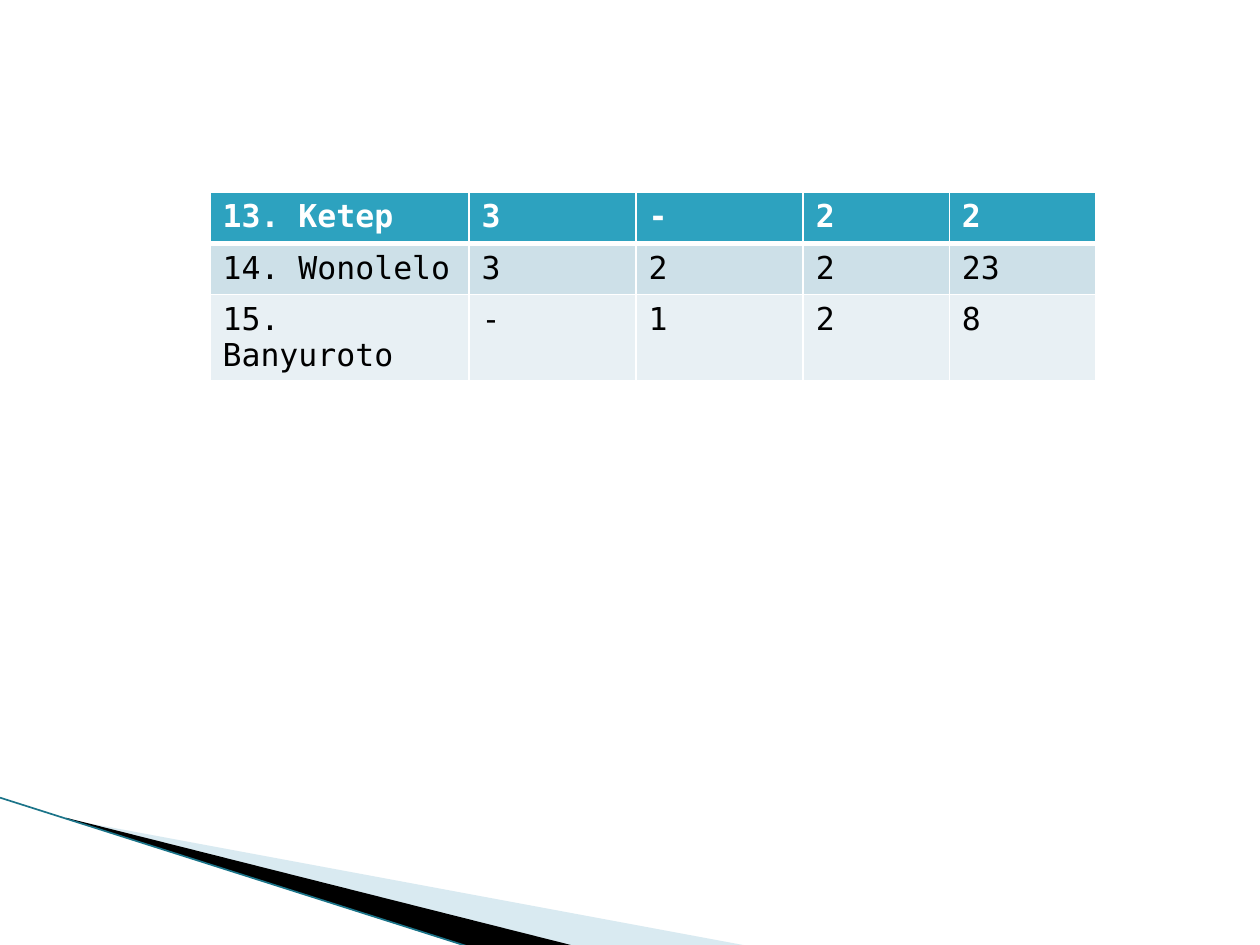
from lxml import etree
from pptx import Presentation
from pptx.dml.color import RGBColor
from pptx.enum.shapes import MSO_CONNECTOR
from pptx.oxml.ns import qn
from pptx.util import Pt

STRAIGHT = MSO_CONNECTOR.STRAIGHT
WHITE = RGBColor(0xFF, 0xFF, 0xFF)
BLACK = RGBColor(0x00, 0x00, 0x00)
PALE_BLUE = RGBColor(0xA0, 0xCB, 0xDC)
EDGE_TEAL = RGBColor(0x1B, 0x74, 0x89)
HEADER_TEAL = RGBColor(0x2D, 0xA2, 0xBF)
BAND_DARK = RGBColor(0xCD, 0xE0, 0xE8)
BAND_LIGHT = RGBColor(0xE8, 0xF0, 0xF4)
FONT = "DejaVu Sans Mono"


def add_wedge(slide, frame, points, color):
    left, top, width, height = [Pt(length) for length in frame]
    builder = slide.shapes.build_freeform(Pt(points[0][0]), Pt(points[0][1]))
    builder.add_line_segments([(Pt(x), Pt(y)) for x, y in points[1:]], close=False)
    wedge = builder.convert_to_shape()
    outline = next(wedge._element.iter(qn("a:path")))
    outline.set("w", str(width))
    outline.set("h", str(height))
    for point in outline.iter(qn("a:pt")):
        point.set("x", str(int(point.get("x")) + wedge.left - left))
        point.set("y", str(int(point.get("y")) + wedge.top - top))
    wedge.left, wedge.top, wedge.width, wedge.height = left, top, width, height
    wedge.shadow.inherit = False
    wedge.fill.solid()
    wedge.fill.fore_color.rgb = color
    wedge.line.fill.background()
    return wedge


def add_border(cell, side, width):
    border = etree.SubElement(cell._tc.get_or_add_tcPr(), qn(f"a:ln{side}"), w=str(Pt(width)))
    fill = etree.SubElement(border, qn("a:solidFill"))
    etree.SubElement(fill, qn("a:srgbClr"), val=str(WHITE))


deck = Presentation()
deck.slide_width = Pt(720)
deck.slide_height = Pt(540)
slide = deck.slides.add_slide(deck.slide_layouts[6])
slide.background.fill.solid()
slide.background.fill.fore_color.rgb = WHITE

pale_wedge = add_wedge(
    slide, (56.2, 393.8, 299.5, 113.8),
    [(39.6, 468.4), (428.4, 540.7), (328.3, 540.7), (39.6, 468)], PALE_BLUE,
)
pale_color = pale_wedge._element.spPr.find(qn("a:solidFill"))[0]
etree.SubElement(pale_color, qn("a:alpha"), val="40000")
add_wedge(
    slide, (-4.3, 455.8, 299.5, 66.2),
    [(37.8, 467.3), (329, 540.7), (268.5, 541.4), (38.5, 468)], BLACK,
)

edge = slide.shapes.add_connector(STRAIGHT, Pt(-0.7), Pt(455.6), Pt(268.5), Pt(541.2))
edge.line.color.rgb = EDGE_TEAL
edge.line.width = Pt(0.95)
etree.SubElement(edge._element.spPr, qn("a:effectLst"))

villages = [
    ("13. Ketep", "3", "-", "2", "2"),
    ("14. Wonolelo", "3", "2", "2", "23"),
    ("15. Banyuroto", "-", "1", "2", "8"),
]
row_fills = [HEADER_TEAL, BAND_DARK, BAND_LIGHT]
column_widths = [148, 95.5, 95.5, 83.5, 83.5]
row_height = 29.2

frame = slide.shapes.add_table(
    len(villages), len(column_widths), Pt(120), Pt(110),
    Pt(sum(column_widths)), Pt(row_height * len(villages)),
)
table = frame.table
table.first_row = False
table.horz_banding = False
for column, width in zip(table.columns, column_widths):
    column.width = Pt(width)

for row_index, values in enumerate(villages):
    table.rows[row_index].height = Pt(row_height)
    is_header = row_index == 0
    for column_index, value in enumerate(values):
        cell = table.cell(row_index, column_index)
        add_border(cell, "L", 1)
        add_border(cell, "R", 1)
        add_border(cell, "T", 3 if row_index == 1 else 1)
        add_border(cell, "B", 3 if is_header else 1)
        cell.fill.solid()
        cell.fill.fore_color.rgb = row_fills[row_index]
        span = cell.text_frame.paragraphs[0].add_run()
        span.text = value
        span.font.name = FONT
        span.font.size = Pt(18)
        span.font.bold = is_header
        span.font.color.rgb = WHITE if is_header else BLACK

deck.save("out.pptx")
